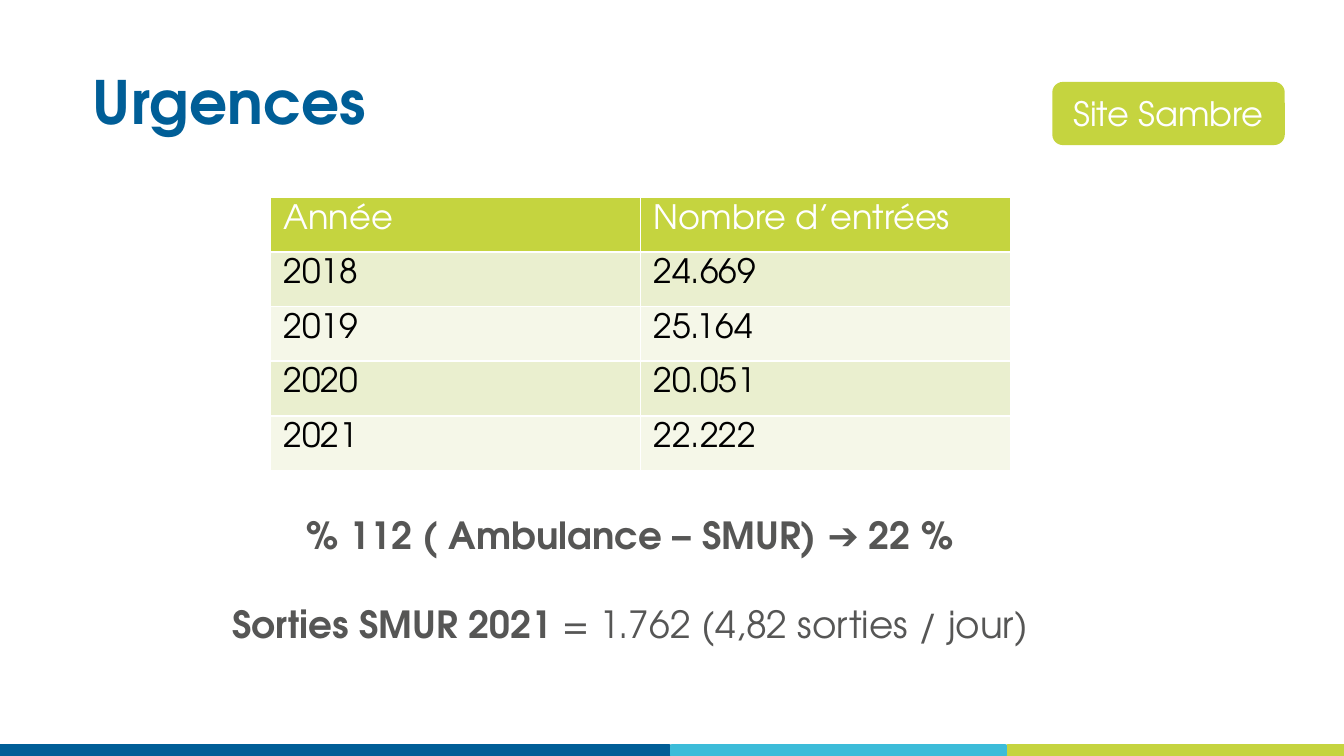
from pptx import Presentation
from pptx.dml.color import RGBColor
from pptx.enum.shapes import MSO_SHAPE
from pptx.enum.text import MSO_ANCHOR, PP_ALIGN
from pptx.util import Inches, Pt

FONT = "TeX Gyre Adventor"
HUES = {
    "blue": "005E97", "cyan": "3CBCD9", "lime": "C5D43F", "white": "FFFFFF",
    "black": "000000", "grey": "565655", "band": "EAEFCF", "pale": "F5F7E8",
}
ROWS = [
    ("Année", "Nombre d’entrées"),
    ("2018", "24.669"),
    ("2019", "25.164"),
    ("2020", "20.051"),
    ("2021", "22.222"),
]
NOTES = [
    [("% 112 ( Ambulance – SMUR) ➔ 22 %", True)],
    [("Sorties SMUR 2021 ", True), ("= 1.762 (4,82 sorties / jour)", False)],
]
BARS = [("blue", 0, 49.8), ("lime", 75, 25.2), ("cyan", 50, 24.8)]


def hue(name):
    return RGBColor.from_string(HUES[name])


def grid(*units):
    """Turn columns and rows, ten to the inch, into lengths."""
    return [Inches(unit / 10) for unit in units]


def paint(item, name):
    item.fill.solid()
    item.fill.fore_color.rgb = hue(name)


def add_run(para, text, size, name, bold=False):
    run = para.add_run()
    run.text = text
    font = run.font
    font.name, font.size, font.bold = FONT, Pt(size), bold
    font.color.rgb = hue(name)


def add_box(slide, kind, area, name):
    box = slide.shapes.add_shape(kind, *grid(*area))
    box.shadow.inherit = False
    paint(box, name)
    box.line.fill.background()
    return box


def add_bars(slide):
    for name, left, width in BARS:
        bar = add_box(slide, MSO_SHAPE.RECTANGLE, (left, 55.5, width, 0.7), name)
        bar.line.color.rgb = hue(name)
        bar.line.width = Pt(2)


def add_title(slide, text):
    title = slide.shapes.title
    title.left, title.top, title.width, title.height = grid(5.9, 2.8, 83.5, 9.4)
    title.text_frame.vertical_anchor = MSO_ANCHOR.MIDDLE
    para = title.text_frame.paragraphs[0]
    para.alignment = PP_ALIGN.LEFT
    add_run(para, text, 32, "blue", True)


def add_tag(slide, text):
    tag = add_box(slide, MSO_SHAPE.ROUNDED_RECTANGLE, (78.3, 6.1, 17.3, 4.7), "lime")
    tag.text_frame.vertical_anchor = MSO_ANCHOR.MIDDLE
    para = tag.text_frame.paragraphs[0]
    para.alignment = PP_ALIGN.CENTER
    add_run(para, text, 18, "white")


def add_grid(slide, rows):
    area = grid(20.1, 14.7, 55.1, 20.3)
    table = slide.shapes.add_table(len(rows), len(rows[0]), *area).table
    for r, row in enumerate(rows):
        fill = "lime" if r == 0 else "band" if r % 2 else "pale"
        ink = "black" if r else "white"
        for c, text in enumerate(row):
            cell = table.cell(r, c)
            paint(cell, fill)
            add_run(cell.text_frame.paragraphs[0], text, 18, ink)


def add_notes(slide, notes):
    frame = slide.shapes.add_textbox(*grid(2.6, 37.6, 88.6, 11.1)).text_frame
    frame.word_wrap = True
    for n, runs in enumerate(notes):
        para = frame.add_paragraph() if n else frame.paragraphs[0]
        para.alignment = PP_ALIGN.CENTER
        if n:
            para.space_before = Pt(24)
        for text, bold in runs:
            add_run(para, text, 20, "grey", bold)


def main():
    deck = Presentation()
    deck.slide_width, deck.slide_height = grid(100, 56.25)
    slide = deck.slides.add_slide(deck.slide_layouts[5])
    add_bars(slide)
    add_grid(slide, ROWS)
    add_notes(slide, NOTES)
    add_tag(slide, "Site Sambre")
    add_title(slide, "Urgences")
    deck.save("out.pptx")


if __name__ == "__main__":
    main()
